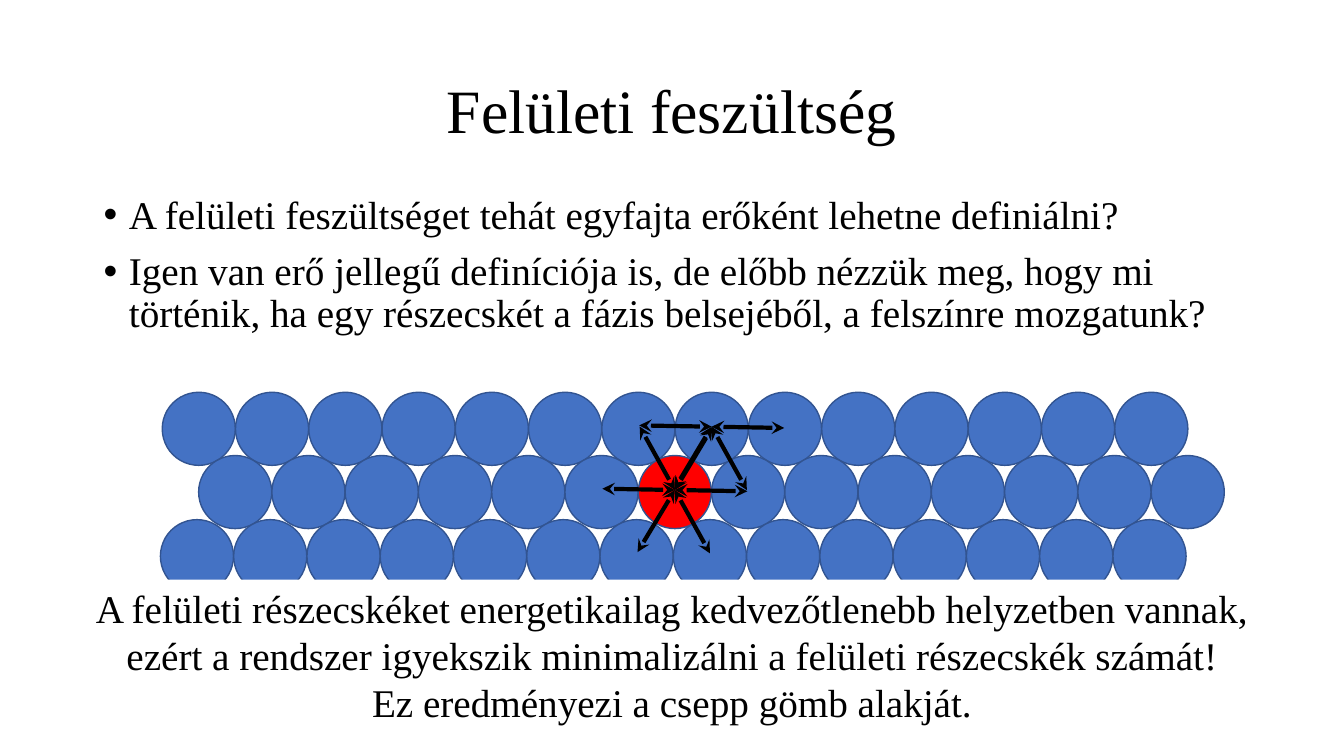
from dataclasses import dataclass
from math import cos, radians, sin

from lxml import etree
from pptx import Presentation
from pptx import util as u
from pptx.dml.color import RGBColor
from pptx.enum import shapes, text
from pptx.oxml import ns


@dataclass(frozen=True)
class Theme:
    font: str = "Times New Roman"
    title_size: float = 44
    body_size: float = 28
    ink: str = "000000"
    paper: str = "FFFFFF"
    particle: str = "4472C4"
    marked: str = "FF0000"
    outline: str = "325491"


THEME = Theme()
DIAMETER, PITCH = 52.2, 52.34
COLUMNS = 14
ROW_OFFSETS = [(1.3, 0), (27.3, 45.2), (0, 91)]  # left and top of each row
MARKED = (1, 6)
SURFACE = (0, 7)
ARROW_LENGTH, ARROW_TILT = 51.8, 1


def pts(*lengths):
    return [u.Pt(length) for length in lengths]


def apply(target, values):
    for name, value in values.items():
        setattr(target, name, value)


def paint(fill, color):
    fill.solid()
    fill.fore_color.rgb = RGBColor.from_string(color)


def write(frame, lines, size, frame_format, line_format):
    apply(frame, frame_format)
    for index, words in enumerate(lines):
        line = frame.paragraphs[0] if index == 0 else frame.add_paragraph()
        apply(line, line_format)
        run = line.add_run()
        run.text = words
        apply(run.font, {"name": THEME.font, "size": u.Pt(size)})
        run.font.color.rgb = RGBColor.from_string(THEME.ink)
    return frame.paragraphs


def add_title(slide, box, words):
    title = slide.shapes.add_textbox(*pts(*box))
    write(title.text_frame, [words], THEME.title_size,
          {"word_wrap": True, "vertical_anchor": text.MSO_ANCHOR.MIDDLE},
          {"alignment": text.PP_ALIGN.CENTER, "line_spacing": 0.9})


def add_questions(slide, box, lines):
    questions = slide.shapes.add_textbox(*pts(*box))
    for line in write(questions.text_frame, lines, THEME.body_size,
                      {"word_wrap": True},
                      {"line_spacing": 0.9, "space_before": u.Pt(10)}):
        # Hanging bullet
        props = line._p.get_or_add_pPr()
        props.set("marL", str(u.Pt(18)))
        props.set("indent", str(-u.Pt(18)))
        etree.SubElement(props, ns.qn("a:buFont")).set("typeface", "Arial")
        etree.SubElement(props, ns.qn("a:buChar")).set("char", "•")


def add_force(slide, hub, angle):
    x, y = hub
    turn = radians(angle + ARROW_TILT)
    tip = x + ARROW_LENGTH * cos(turn), y + ARROW_LENGTH * sin(turn)
    force = slide.shapes.add_connector(
        shapes.MSO_CONNECTOR.STRAIGHT, *pts(x, y, *tip))
    force.line.width = u.Pt(3)
    paint(force.line.fill, THEME.ink)
    line_props = force.line._get_or_add_ln()
    for end in ("a:headEnd", "a:tailEnd"):
        etree.SubElement(line_props, ns.qn(end)).set("type", "stealth")
    etree.SubElement(force._element.spPr, ns.qn("a:effectLst"))


def add_particles(slide, box):
    left, top = box

    def corner(row, column):
        dx, dy = ROW_OFFSETS[row]
        return left + dx + column * PITCH, top + dy

    # Close-packed rows
    for row in range(len(ROW_OFFSETS)):
        for column in range(COLUMNS):
            particle = slide.shapes.add_shape(
                shapes.MSO_SHAPE.OVAL,
                *pts(*corner(row, column), DIAMETER, DIAMETER))
            particle.shadow.inherit = False
            marked = (row, column) == MARKED
            paint(particle.fill, THEME.marked if marked else THEME.particle)
            paint(particle.line.fill, THEME.outline)
            particle.line.width = u.Pt(1)

    # Forces: six neighbours inside, four at the surface
    for place, angles in ((MARKED, range(0, 360, 60)),
                          (SURFACE, (0, 60, 120, 180))):
        x, y = corner(*place)
        hub = x + DIAMETER / 2, y + DIAMETER / 2 - 1.5
        for angle in angles:
            add_force(slide, hub, angle)


def add_conclusion(slide, box, lines):
    conclusion = slide.shapes.add_shape(
        shapes.MSO_SHAPE.RECTANGLE, *pts(*box))
    conclusion.shadow.inherit = False
    paint(conclusion.fill, THEME.paper)
    conclusion.line.fill.background()
    write(conclusion.text_frame, lines, THEME.body_size,
          {"word_wrap": False, "vertical_anchor": text.MSO_ANCHOR.TOP,
           "auto_size": text.MSO_AUTO_SIZE.SHAPE_TO_FIT_TEXT},
          {"alignment": text.PP_ALIGN.CENTER})


def main():
    deck = Presentation()
    apply(deck, {"slide_width": u.Pt(960), "slide_height": u.Pt(540)})
    slide = deck.slides.add_slide(deck.slide_layouts[6])

    add_questions(slide, (67, 136, 828, 108), [
        "A felületi feszültséget tehát egyfajta erőként lehetne definiálni?",
        "Igen van erő jellegű definíciója is, de előbb nézzük meg, hogy mi "
        "történik, ha egy részecskét a fázis belsejéből, a felszínre "
        "mozgatunk?",
    ])
    add_title(slide, (66, 28.8, 828, 104.4), "Felületi feszültség")
    add_particles(slide, (114.6, 280.2))
    add_conclusion(slide, (57.4, 414, 845.2, 108.7), [
        "A felületi részecskéket energetikailag kedvezőtlenebb helyzetben "
        "vannak,",
        "ezért a rendszer igyekszik minimalizálni a felületi részecskék "
        "számát!",
        "Ez eredményezi a csepp gömb alakját.",
    ])
    deck.save("out.pptx")


if __name__ == "__main__":
    main()
